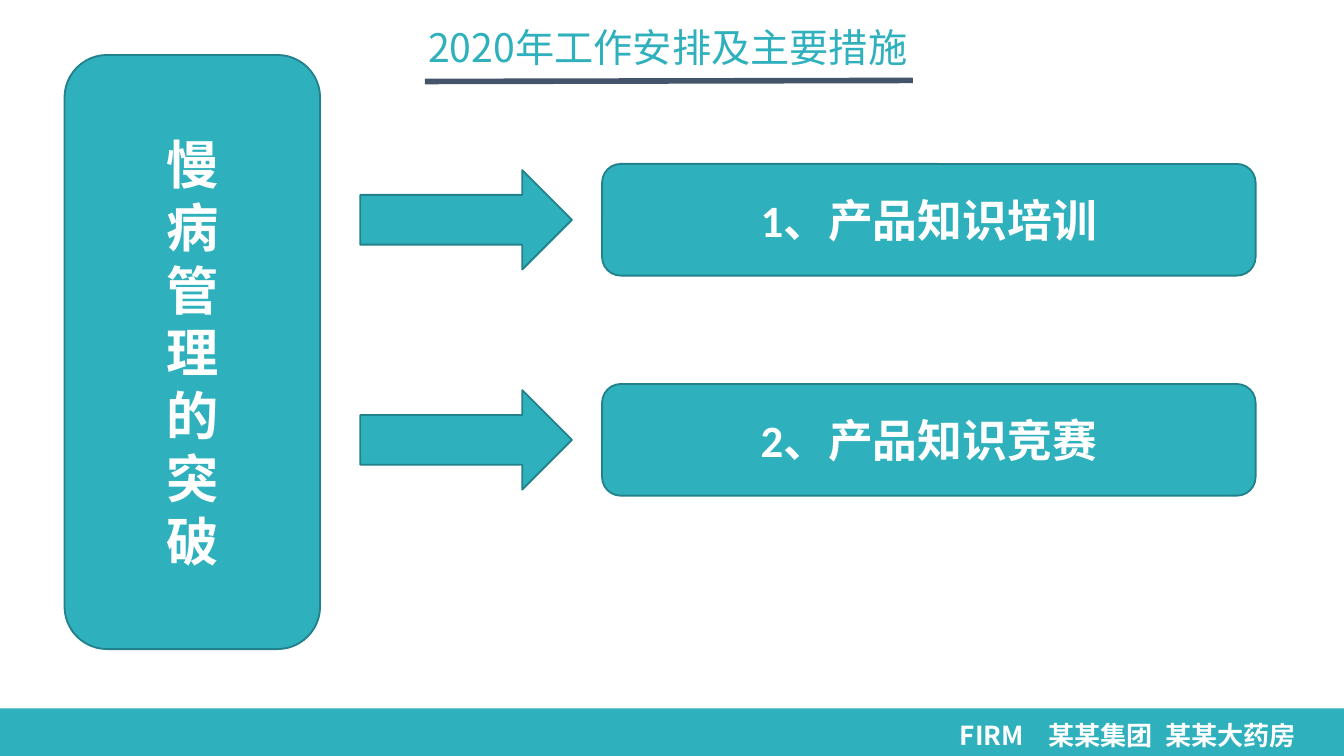
from lxml.etree import SubElement
from pptx import Presentation
from pptx.dml.color import RGBColor
from pptx.enum.shapes import MSO_CONNECTOR as LINE, MSO_SHAPE as SHAPE
from pptx.enum.text import MSO_ANCHOR as ANCHOR, PP_ALIGN as ALIGN
from pptx.oxml.ns import qn
from pptx.util import Cm, Pt

COLORS = {"teal": "2EB0BD", "edge": "22828C", "navy": "44546A", "white": "FFFFFF"}
SANS, BODY = "Noto Sans CJK SC", "Calibri"


def color(name):
    return RGBColor.from_string(COLORS[name])


def add_run(p, text, size, font, fill="white", bold=True):
    r = p.add_run()
    r.text = text
    r.font.size, r.font.name, r.font.bold = Pt(size), font, bold
    r.font.color.rgb = color(fill)
    SubElement(r._r.get_or_add_rPr(), qn("a:ea"), typeface=font)


def add_block(s, kind, box, lines=(), size=24, outlined=True):
    sp = s.shapes.add_shape(kind, *map(Cm, box))
    sp.shadow.inherit = False
    sp.fill.solid()
    sp.fill.fore_color.rgb = color("teal")
    if outlined:
        sp.line.color.rgb = color("edge")
        sp.line.width = Pt(1)
    else:
        sp.line.fill.background()
    tf = sp.text_frame
    tf.vertical_anchor = ANCHOR.MIDDLE
    for i, line in enumerate(lines):
        p = tf.add_paragraph() if i else tf.paragraphs[0]
        p.alignment = ALIGN.CENTER
        add_run(p, line, size, BODY)


def add_title(s, box, text):
    x, y, w, h = box
    tf = s.shapes.add_textbox(*map(Cm, box)).text_frame
    tf.word_wrap = True
    tf.vertical_anchor = ANCHOR.MIDDLE
    tf.margin_left = tf.margin_right = 0
    p = tf.paragraphs[0]
    p.alignment = ALIGN.CENTER
    p.line_spacing = 0.9
    add_run(p, text, 21, SANS, "teal", False)
    rule = s.shapes.add_connector(
        LINE.STRAIGHT, Cm(x + 3.74), Cm(y + 1.24), Cm(x + w - 3.7), Cm(y + 1.22))
    rule.line.color.rgb = color("navy")
    rule.line.width = Pt(3)
    SubElement(rule._element.spPr, qn("a:effectLst"))


def add_row(s, box, text):
    x, y, w, h = box
    arrow_h = 1.88
    add_block(s, SHAPE.RIGHT_ARROW, (x, y + (h - arrow_h) / 2, 4, arrow_h))
    add_block(s, SHAPE.FLOWCHART_ALTERNATE_PROCESS, (x + 4.57, y, w - 4.57, h), [text])


def add_footer(s, box, words, stops):
    x, y, w, h = box
    add_block(s, SHAPE.RECTANGLE, box, outlined=False)
    tf = s.shapes.add_textbox(Cm(x + 17.96), Cm(y + 0.1), Cm(w - 17.96), Cm(0.79)).text_frame
    tf.word_wrap = True
    tf.margin_left = tf.margin_right = Cm(0.18)
    tf.margin_top = tf.margin_bottom = Cm(0.1)
    p = tf.paragraphs[0]
    tabs = SubElement(p._p.get_or_add_pPr(), qn("a:tabLst"))
    for stop in stops:
        SubElement(tabs, qn("a:tab"), pos=str(Cm(stop)), algn="l")
    add_run(p, "\t".join(words), 14, SANS)


def main():
    prs = Presentation()
    prs.slide_width, prs.slide_height = Cm(25.4), Cm(14.29)
    s = prs.slides.add_slide(prs.slide_layouts[6])
    add_footer(s, (0, 13.39, 25.4, 0.9), ["FIRM", "某某集团", "某某大药房"], [1.67, 3.88])
    add_title(s, (4.29, 0.3, 16.66, 1.27), "2020年工作安排及主要措施")
    add_block(s, SHAPE.FLOWCHART_ALTERNATE_PROCESS, (1.22, 1.04, 4.83, 11.23),
              "慢病管理的突破", 28)
    for i, text in enumerate(["1、产品知识培训", "2、产品知识竞赛"]):
        add_row(s, (6.81, 3.1 + i * 4.16, 16.92, 2.11), text)
    prs.save("out.pptx")


if __name__ == "__main__":
    main()
